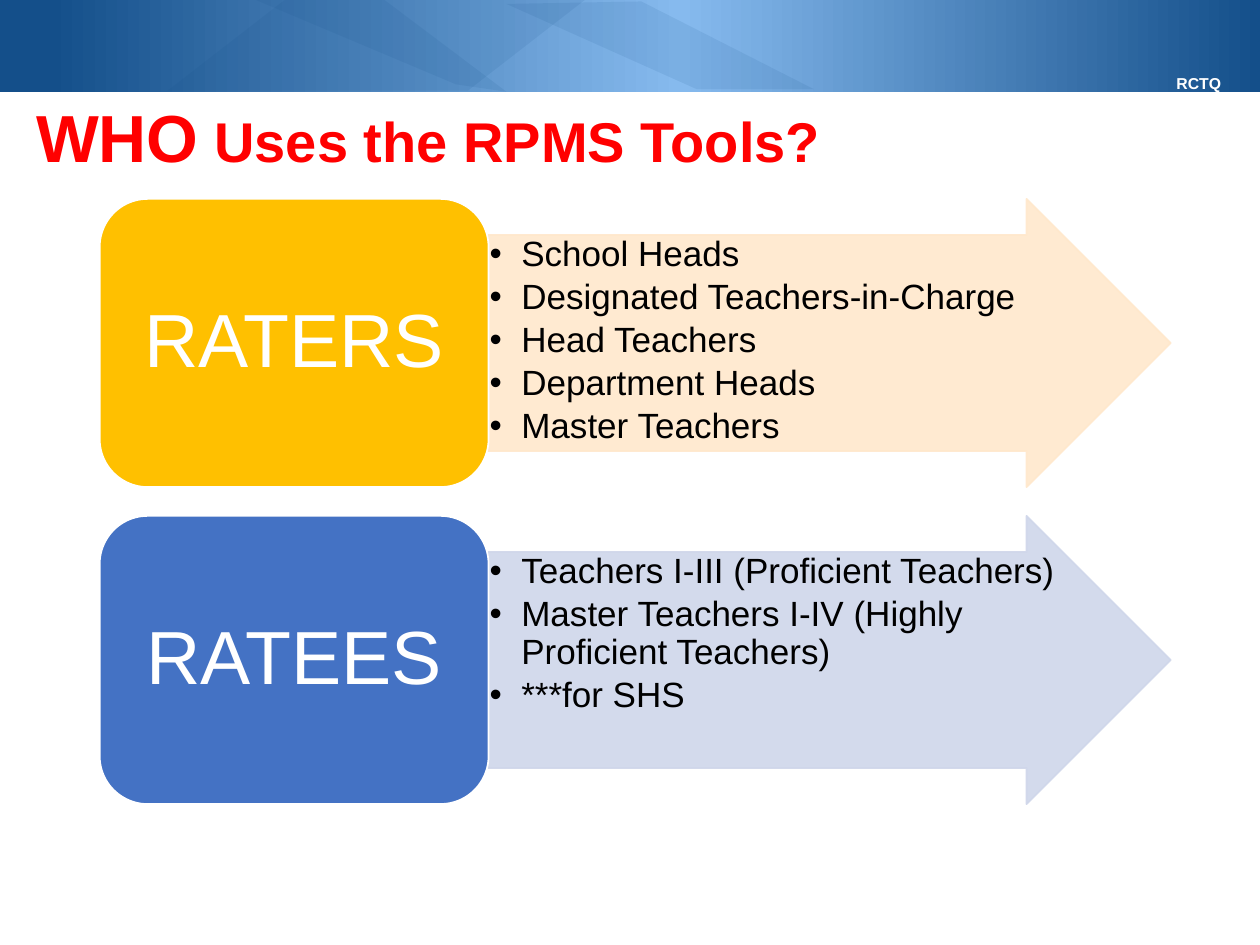
from lxml import etree
from pptx import Presentation
from pptx.dml.color import RGBColor
from pptx.enum import shapes, text
from pptx.oxml.ns import qn
from pptx.util import Cm, Pt

TITLE = [("WHO", 38), (" Uses the RPMS Tools?", 32)]
ROLES = [
    {"name": "RATERS", "fill": "FFC000", "arrow": "FFE8CC",
     "members": ["School Heads", "Designated Teachers-in-Charge", "Head Teachers",
                 "Department Heads", "Master Teachers"]},
    {"name": "RATEES", "fill": "4472C4", "arrow": "CFD6EA",
     "members": ["Teachers I-III (Proficient Teachers)",
                 "Master Teachers I-IV (Highly Proficient Teachers)", "***for SHS"]},
]
NAVY, SKY, WHITE = "144F8A", "86BAEE", "FFFFFF"
BANNER_FACETS = [
    [(10.21, 0.08), (12.93, 0.03), (16.41, 1.8), (14.05, 1.8)],
    [(5.16, 0), (7.75, 0), (10.21, 1.85), (9.19, 1.7)],
]
SLIDE_WIDTH, SLIDE_HEIGHT = 25.4, 19.05
ROLE_LEFT, ROLE_WIDTH = 2.01, 7.84
ARROW_LEFT, ARROW_WIDTH = 9.84, 13.76
ROLE_TOP, ROLE_HEIGHT, ROLE_STEP = 4.01, 5.81, 6.39
LIST_WIDTH, LIST_HEIGHT = 11.58, 4.34


def color(value):
    return RGBColor.from_string(value)


def set_alpha(fill_parent, percent):
    for solid in fill_parent.iter(qn("a:solidFill")):
        etree.SubElement(solid[0], qn("a:alpha"), val=str(percent * 1000))


def style(shape, fill, line=None, opacity=100):
    shape.shadow.inherit = False
    shape.fill.solid()
    shape.fill.fore_color.rgb = color(fill)
    if line:
        shape.line.color.rgb = color(line)
        shape.line.width = Pt(1)
    else:
        shape.line.fill.background()
    if opacity < 100:
        set_alpha(shape.element.spPr, opacity)
    return shape


def add_preset(slide, kind, box, fill, adjustments=(), **format):
    shape = slide.shapes.add_shape(kind, *map(Cm, box))
    for index, value in enumerate(adjustments):
        shape.adjustments[index] = value
    return style(shape, fill, **format)


def add_bullet(paragraph):
    properties = paragraph._p.get_or_add_pPr()
    properties.set("marL", str(Cm(0.64)))
    properties.set("indent", str(-Cm(0.64)))
    etree.SubElement(properties, qn("a:buFont"), typeface="Arial")
    etree.SubElement(properties, qn("a:buChar"), char="•")


def add_text(slide, paragraphs, box, hue, bold=False, align=text.PP_ALIGN.LEFT,
             anchor=text.MSO_ANCHOR.TOP, margins=(0.25, 0.13), spacing=None,
             after=0, bullet=False):
    frame = slide.shapes.add_textbox(*map(Cm, box)).text_frame
    frame.word_wrap = True
    frame.vertical_anchor = anchor
    frame.margin_left = frame.margin_right = Cm(margins[0])
    frame.margin_top = frame.margin_bottom = Cm(margins[1])
    for index, runs in enumerate(paragraphs):
        paragraph = frame.add_paragraph() if index else frame.paragraphs[0]
        paragraph.alignment = align
        paragraph.line_spacing = spacing
        paragraph.space_after = Pt(after)
        if bullet:
            add_bullet(paragraph)
        for words, size in runs:
            run = paragraph.add_run()
            run.text = words
            run.font.name = "Arial"
            run.font.size = Pt(size)
            run.font.bold = bold
            run.font.color.rgb = color(hue)


def add_banner(slide):
    banner = add_preset(slide, shapes.MSO_SHAPE.RECTANGLE, (0, 0, SLIDE_WIDTH, 1.85), NAVY)
    banner.fill.gradient()
    banner.fill.gradient_angle = 0
    stops = banner.fill._fill._gradFill.find(qn("a:gsLst"))
    for stop in list(stops):
        stops.remove(stop)
    for position, value in [(4, NAVY), (54, SKY), (100, NAVY)]:
        stop = etree.SubElement(stops, qn("a:gs"), pos=str(position * 1000))
        etree.SubElement(stop, qn("a:srgbClr"), val=value)
    add_preset(slide, shapes.MSO_SHAPE.PARALLELOGRAM, (3.38, 0, 8.41, 1.83), NAVY,
               [1.29], opacity=10)
    for facet in BANNER_FACETS:
        points = [(Cm(x), Cm(y)) for x, y in facet]
        builder = slide.shapes.build_freeform(*points[0])
        builder.add_line_segments(points[1:], close=True)
        style(builder.convert_to_shape(), NAVY, opacity=10)
    add_text(slide, [[("RCTQ", 9)]], (22.96, 1.35, 2.41, 0.64), WHITE, bold=True,
             align=text.PP_ALIGN.CENTER)


def add_role(slide, role, top):
    add_preset(slide, shapes.MSO_SHAPE.RIGHT_ARROW,
               (ARROW_LEFT, top, ARROW_WIDTH, ROLE_HEIGHT), role["arrow"], [0.75, 0.5],
               line=role["arrow"], opacity=90)
    add_text(slide, [[(member, 20)] for member in role["members"]],
             (ARROW_LEFT, top + ROLE_HEIGHT / 8, LIST_WIDTH, LIST_HEIGHT), "000000",
             margins=(0.03, 0.03), spacing=0.9, after=3, bullet=True)
    add_preset(slide, shapes.MSO_SHAPE.ROUNDED_RECTANGLE,
               (ROLE_LEFT, top, ROLE_WIDTH, ROLE_HEIGHT), role["fill"], line=WHITE)
    inset = 0.28
    add_text(slide, [[(role["name"], 43)]],
             (ROLE_LEFT + inset, top + inset, ROLE_WIDTH - 2 * inset, ROLE_HEIGHT - 2 * inset),
             WHITE, align=text.PP_ALIGN.CENTER, anchor=text.MSO_ANCHOR.MIDDLE,
             margins=(0.46, 0.23), spacing=0.9)


def main():
    presentation = Presentation()
    presentation.slide_width, presentation.slide_height = Cm(SLIDE_WIDTH), Cm(SLIDE_HEIGHT)
    slide = presentation.slides.add_slide(presentation.slide_layouts[6])
    add_banner(slide)
    add_text(slide, [TITLE], (0.48, 1.98, 22.66, 1.42), "FF0000", bold=True, spacing=0.9)
    for index, role in enumerate(ROLES):
        add_role(slide, role, ROLE_TOP + index * ROLE_STEP)
    presentation.save("out.pptx")


if __name__ == "__main__":
    main()
